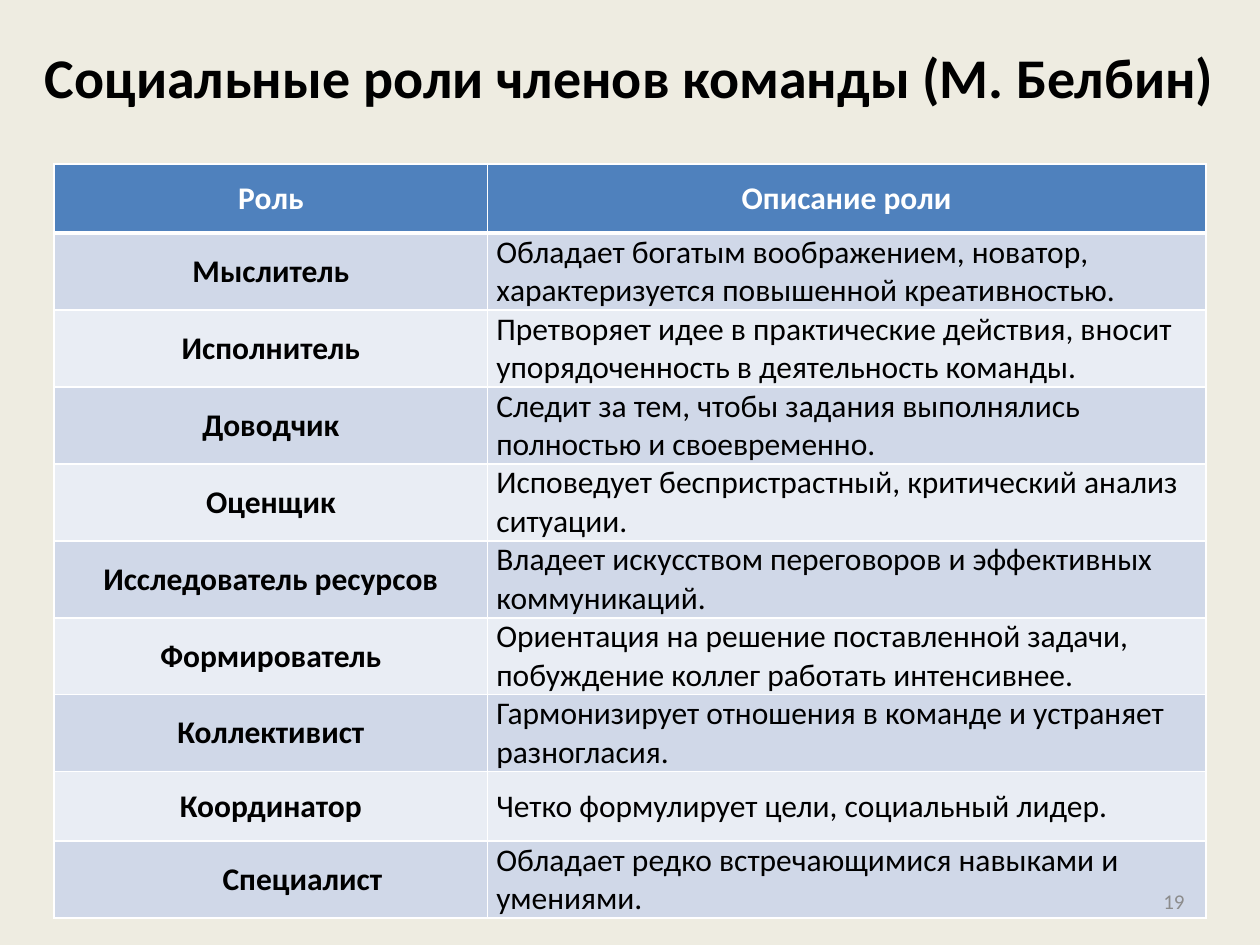
from pptx import Presentation
from pptx.dml.color import RGBColor
from pptx.enum.text import MSO_ANCHOR, PP_ALIGN
from pptx.oxml import parse_xml
from pptx.oxml.ns import nsdecls
from pptx.util import Inches, Pt


def rgb(value):
    return RGBColor.from_string(value)


def set_font(p, size, color, bold=False):
    p.font.name = "Calibri"
    p.font.size = Pt(size)
    p.font.bold = bold
    p.font.color.rgb = rgb(color)


rows = [
    ("Роль", "Описание роли"),
    ("Мыслитель", "Обладает богатым воображением, новатор, характеризуется повышенной креативностью."),
    ("Исполнитель", "Претворяет идее в практические действия, вносит упорядоченность в деятельность команды."),
    ("Доводчик", "Следит за тем, чтобы задания выполнялись полностью и своевременно."),
    ("Оценщик", "Исповедует беспристрастный, критический анализ ситуации."),
    ("Исследователь ресурсов", "Владеет искусством переговоров и эффективных коммуникаций."),
    ("Формирователь", "Ориентация на решение поставленной задачи, побуждение коллег работать интенсивнее."),
    ("Коллективист", "Гармонизирует отношения в команде и устраняет разногласия."),
    ("Координатор", "Четко формулирует цели, социальный лидер."),
    ("Специалист", "Обладает редко встречающимися навыками и умениями."),
]

prs = Presentation()
prs.slide_width, prs.slide_height = Inches(10), Inches(7.5)
s = prs.slides.add_slide(prs.slide_layouts[5])
s.background.fill.solid()
s.background.fill.fore_color.rgb = rgb("EEECE1")

# Title
title = s.shapes.title
title.left, title.top = Inches(0), Inches(-0.02)
title.width, title.height = Inches(10), Inches(1.25)
tf = title.text_frame
tf.text = "Социальные роли членов команды (М. Белбин)"
tf.vertical_anchor = MSO_ANCHOR.MIDDLE
p = tf.paragraphs[0]
p.alignment = PP_ALIGN.CENTER
set_font(p, 32, "000000", True)

# Table of roles
table = s.shapes.add_table(len(rows), 2, Inches(0.43), Inches(1.3),
                           Inches(9.14), Inches(0.55 * len(rows))).table
table.columns[0].width = Inches(3.44)
table.columns[1].width = Inches(5.7)

for i, row in enumerate(rows):
    header = i == 0
    fill = "4F81BD" if header else ("E9EDF4", "D0D8E8")[i % 2]
    table.rows[i].height = Inches(0.55)
    for j, text in enumerate(row):
        cell = table.cell(i, j)
        cell.text = text
        cell.vertical_anchor = MSO_ANCHOR.MIDDLE
        cell.margin_left = cell.margin_right = Inches(0.07)
        cell.margin_top = cell.margin_bottom = Inches(0)
        p = cell.text_frame.paragraphs[0]
        p.alignment = PP_ALIGN.CENTER if header or j == 0 else PP_ALIGN.LEFT
        set_font(p, 18, "FFFFFF" if header else "000000", header or j == 0)

        # White borders, thicker around the header's lower edge
        tc_pr = cell._tc.get_or_add_tcPr()
        for side in "LRTB":
            thick = (header and side == "B") or (i == 1 and side == "T")
            tc_pr.append(parse_xml(
                f'<a:ln{side} {nsdecls("a")} w="{Pt(3 if thick else 1)}"><a:solidFill>'
                f'<a:srgbClr val="FFFFFF"/></a:solidFill></a:ln{side}>'))
        cell.fill.solid()
        cell.fill.fore_color.rgb = rgb(fill)

# First-line indent of the last role
last_role = table.cell(len(rows) - 1, 0).text_frame.paragraphs[0]
last_role._p.get_or_add_pPr().set("indent", str(Inches(0.5)))

# Slide number
number = s.shapes.add_textbox(Inches(7.17), Inches(6.95), Inches(2.33), Inches(0.4))
tf = number.text_frame
tf.word_wrap = True
tf.vertical_anchor = MSO_ANCHOR.MIDDLE
tf.text = "19"
p = tf.paragraphs[0]
p.alignment = PP_ALIGN.RIGHT
set_font(p, 12, "8C8C8C")

prs.save("out.pptx")
